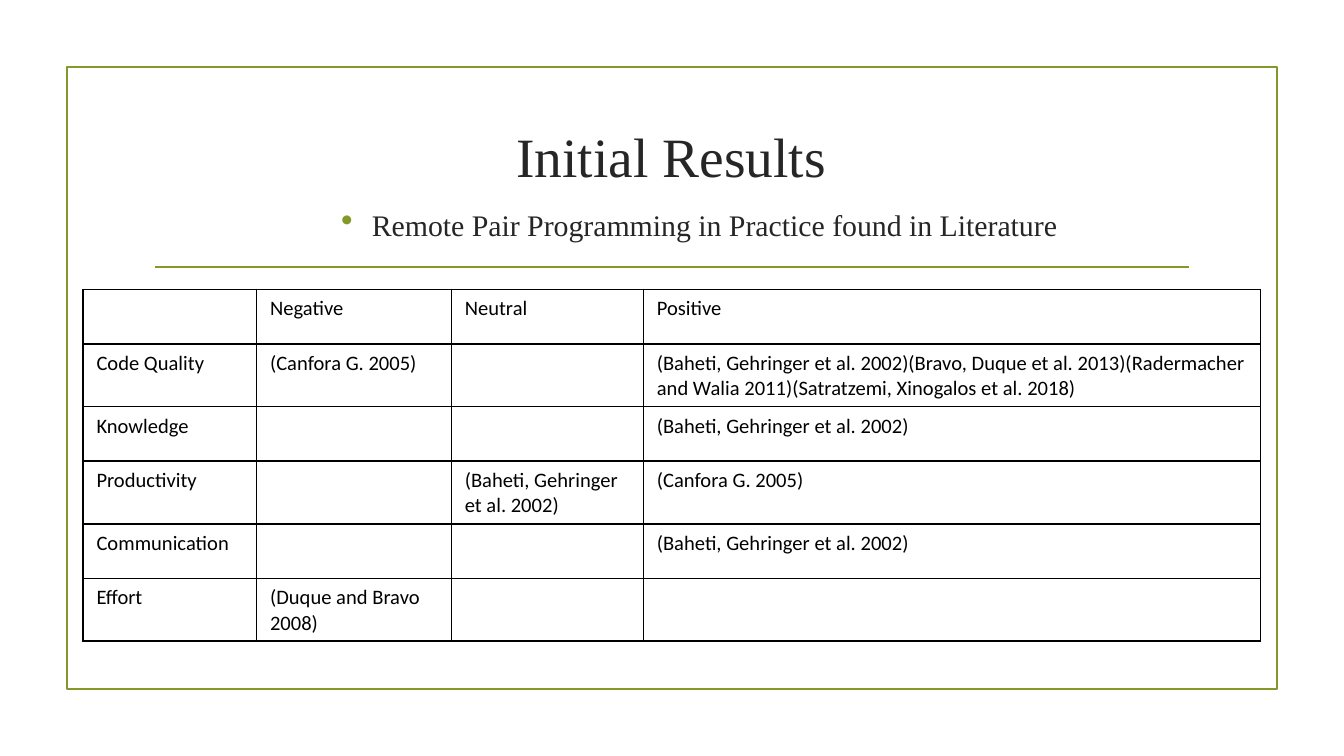
from lxml import etree
from pptx import Presentation
from pptx.dml.color import RGBColor
from pptx.enum.shapes import MSO_CONNECTOR, MSO_SHAPE
from pptx.enum.text import MSO_ANCHOR, PP_ALIGN
from pptx.oxml.ns import qn
from pptx.util import Cm, Pt

STRAIGHT = MSO_CONNECTOR.STRAIGHT
RECTANGLE = MSO_SHAPE.RECTANGLE
TOP = MSO_ANCHOR.TOP
CENTER = PP_ALIGN.CENTER

COLORS = {"accent": "83992A", "heading": "262626", "cell": "000000"}
TITLE_FONT = {"name": "Times New Roman", "size": Pt(29.7)}
SUBTITLE_FONT = {"name": "Times New Roman", "size": Pt(16)}
CELL_FONT = {"name": "Calibri", "size": Pt(11)}

BAHETI = "(Baheti, Gehringer et al. 2002)"
CANFORA = "(Canfora G. 2005)"
RESULTS = [
    ["", "Negative", "Neutral", "Positive"],
    ["Code Quality", CANFORA, "",
     BAHETI + "(Bravo, Duque et al. 2013)(Radermacher and Walia 2011)"
     "(Satratzemi, Xinogalos et al. 2018)"],
    ["Knowledge", "", "", BAHETI],
    ["Productivity", "", BAHETI, CANFORA],
    ["Communication", "", "", BAHETI],
    ["Effort", "(Duque and Bravo 2008)", "", ""],
]
COLUMN_WIDTHS = [3.28, 3.68, 3.63, 11.66]
ROW_HEIGHT = 1.03


def rgb(name):
    """Return the named colour."""
    return RGBColor.from_string(COLORS[name])


def style_font(font, values, color):
    """Apply format values and a colour to a font."""
    for attribute, value in values.items():
        setattr(font, attribute, value)
    font.color.rgb = rgb(color)


def add_child(parent, tag, **attributes):
    """Append a DrawingML element and return it."""
    return etree.SubElement(parent, qn(tag), attributes)


def add_frame(slide, left, top, width, height):
    """Draw the border and the rule below the heading."""
    border = slide.shapes.add_shape(
        RECTANGLE, Cm(left), Cm(top), Cm(width), Cm(height))
    border.shadow.inherit = False
    border.fill.background()
    inset, drop = 1.65, 3.78
    rule = slide.shapes.add_connector(
        STRAIGHT, Cm(left + inset), Cm(top + drop),
        Cm(left + width - inset), Cm(top + drop))
    add_child(rule._element.spPr, "a:effectLst")
    for outline in (border.line, rule.line):
        outline.color.rgb = rgb("accent")
        outline.width = Pt(1.25)


def add_heading_line(slide, text, font, box, top_margin):
    """Add one centred line of heading text and return its paragraph."""
    frame = slide.shapes.add_textbox(*map(Cm, box)).text_frame
    settings = {"word_wrap": True, "vertical_anchor": TOP,
                "margin_top": Cm(top_margin)}
    for attribute, value in settings.items():
        setattr(frame, attribute, value)
    paragraph = frame.paragraphs[0]
    paragraph.alignment = CENTER
    run = paragraph.add_run()
    run.text = text
    style_font(run.font, font, "heading")
    return paragraph


def add_heading(slide, left, top, width, height):
    """Place the title and the bulleted subtitle below it."""
    add_heading_line(slide, "Initial Results", TITLE_FONT,
                     (left, top, width, height), 0.24)
    subtitle = add_heading_line(
        slide, "Remote Pair Programming in Practice found in Literature",
        SUBTITLE_FONT, (left - 0.28, top + 1.65, width + 1.63, 1.37), 0.19)
    subtitle.space_after = Pt(4.5)
    properties = subtitle._p.get_or_add_pPr()
    indent = Cm(0.58)
    properties.set("marL", str(indent))
    properties.set("indent", str(-indent))
    bullet_color = add_child(properties, "a:buClr")
    add_child(bullet_color, "a:srgbClr", val=COLORS["accent"])
    add_child(properties, "a:buSzPct", val="115000")
    add_child(properties, "a:buChar", char="•")


def add_borders(cell):
    """Outline a cell on all four sides and leave it unfilled."""
    properties = cell._tc.get_or_add_tcPr()
    for side in ("a:lnL", "a:lnR", "a:lnT", "a:lnB"):
        edge = add_child(properties, side, w=str(Pt(1)))
        fill = add_child(edge, "a:solidFill")
        add_child(fill, "a:srgbClr", val=COLORS["cell"])
    cell.fill.background()


def add_results(slide, left, top, widths, row_height):
    """Place the table of literature findings."""
    table = slide.shapes.add_table(
        len(RESULTS), len(widths), Cm(left), Cm(top),
        Cm(sum(widths)), Cm(row_height * len(RESULTS))).table
    table.first_row = False
    table.horz_banding = False
    for column, width in zip(table.columns, widths):
        column.width = Cm(width)
    for row, findings in zip(table.rows, RESULTS):
        row.height = Cm(row_height)
        for cell, finding in zip(row.cells, findings):
            cell.text = finding
            style_font(cell.text_frame.paragraphs[0].font, CELL_FONT, "cell")
            for run in cell.text_frame.paragraphs[0].runs:
                style_font(run.font, CELL_FONT, "cell")
            add_borders(cell)


def main():
    """Build and save the slide."""
    presentation = Presentation()
    presentation.slide_width = Cm(25.4)
    presentation.slide_height = Cm(14.29)
    slide = presentation.slides.add_slide(presentation.slide_layouts[6])
    add_frame(slide, 1.27, 1.27, 22.86, 11.76)
    add_heading(slide, 2.69, 2.06, 19.99, 2.72)
    add_results(slide, 1.57, 5.47, COLUMN_WIDTHS, ROW_HEIGHT)
    presentation.save("out.pptx")


if __name__ == "__main__":
    main()
